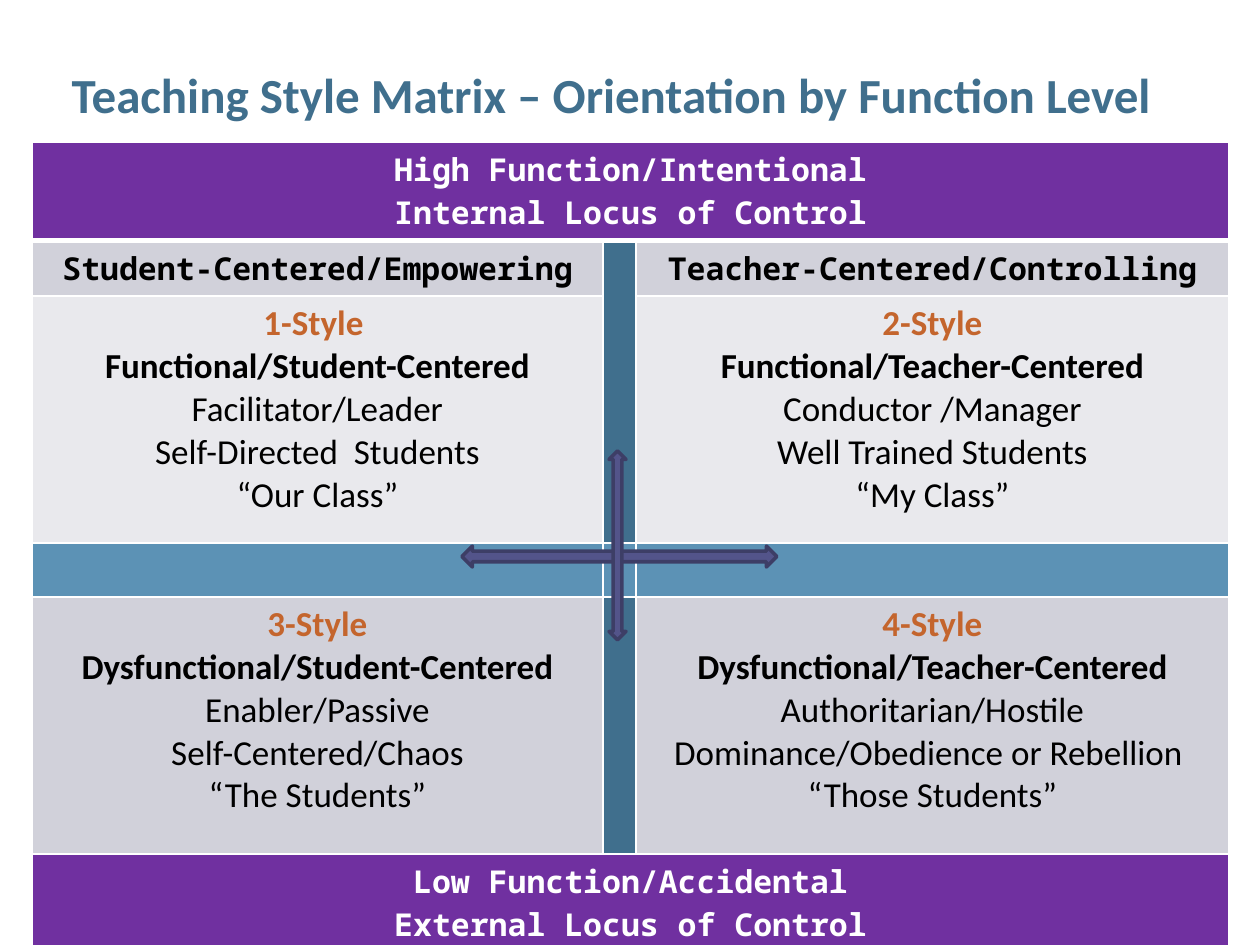
from lxml.etree import SubElement
from pptx import Presentation
from pptx.dml.color import RGBColor
from pptx.enum.shapes import MSO_SHAPE
from pptx.enum.text import MSO_ANCHOR, PP_ALIGN
from pptx.oxml.ns import qn
from pptx.util import Pt

EMU_PER_PX = 914400 / 126
COLORS = {
    "white": "FFFFFF",
    "black": "000000",
    "purple": "7030A0",
    "heading": "D1D1DA",
    "light": "E9E9ED",
    "teal": "406F8D",
    "blue": "5C92B5",
    "orange": "C4652D",
    "arrow": "53548A",
    "outline": "3D3E66",
}
BODY_FONT = "Calibri"
HEADING_FONT = "Noto Sans Mono"
COLUMN_WIDTHS = [571, 33, 593]
ROW_HEIGHTS = [88, 50, 247, 54, 257, 88]
BANNERS = {
    0: ["High Function/Intentional", "Internal Locus of Control"],
    5: ["Low Function/Accidental", "External Locus of Control"],
}
ORIENTATIONS = {0: "Student-Centered/Empowering", 2: "Teacher-Centered/Controlling"}
STYLES = {
    (2, 0): ["1-Style ", "Functional/Student-Centered", "Facilitator/Leader",
             "Self-Directed  Students", "“Our Class”"],
    (2, 2): ["2-Style", "Functional/Teacher-Centered", "Conductor /Manager",
             "Well Trained Students", "“My Class”"],
    (4, 0): ["3-Style", "Dysfunctional/Student-Centered", "Enabler/Passive",
             "Self-Centered/Chaos", "“The Students”"],
    (4, 2): ["4-Style", "Dysfunctional/Teacher-Centered", "Authoritarian/Hostile",
             "Dominance/Obedience or Rebellion ", "“Those Students”"],
}


def px(length):
    return round(length * EMU_PER_PX)


def color(name):
    return RGBColor.from_string(COLORS[name])


class SlideBuilder:
    def __init__(self, presentation):
        self.slide = presentation.slides.add_slide(presentation.slide_layouts[5])

    def add_lines(self, text_frame, lines, font, size):
        for index, (text, color_name, bold) in enumerate(lines):
            paragraph = text_frame.paragraphs[0] if index == 0 else text_frame.add_paragraph()
            paragraph.alignment = PP_ALIGN.CENTER
            run = paragraph.add_run()
            run.text = text
            run.font.name = font
            run.font.size = Pt(size)
            run.font.bold = bold
            run.font.color.rgb = color(color_name)

    def title(self, text, left, top, width, height):
        shape = self.slide.shapes.title
        shape.left, shape.top, shape.width, shape.height = map(px, (left, top, width, height))
        shape.text_frame.vertical_anchor = MSO_ANCHOR.MIDDLE
        self.add_lines(shape.text_frame, [(text, "teal", True)], BODY_FONT, 28)

    def table(self, left, top, column_widths, row_heights):
        table = self.slide.shapes.add_table(
            len(row_heights), len(column_widths), px(left), px(top),
            px(sum(column_widths)), px(sum(row_heights))).table
        table.first_row = table.horz_banding = False
        for column, width in zip(table.columns, column_widths):
            column.width = px(width)
        for row, height in zip(table.rows, row_heights):
            row.height = px(height)
        return table

    def cell(self, cell, fill, top_border=1, bottom_border=1):
        properties = cell._tc.get_or_add_tcPr()
        borders = {"lnL": 1, "lnR": 1, "lnT": top_border, "lnB": bottom_border}
        for tag, width in borders.items():
            line = SubElement(properties, qn(f"a:{tag}"), w=str(Pt(width)))
            solid = SubElement(line, qn("a:solidFill"))
            SubElement(solid, qn("a:srgbClr"), val=COLORS["white"])
        cell.fill.solid()
        cell.fill.fore_color.rgb = color(fill)

    def arrow(self, kind, left, top, width, height):
        shape = self.slide.shapes.add_shape(kind, *map(px, (left, top, width, height)))
        shape.shadow.inherit = False
        shape.fill.solid()
        shape.fill.fore_color.rgb = color("arrow")
        shape.line.color.rgb = color("outline")
        shape.line.width = Pt(2)


def cell_fill(row, column):
    if row in BANNERS:
        return "purple"
    if row == 3:
        return "blue"
    if column == 1:
        return "teal"
    return "light" if row == 2 else "heading"


def build_matrix(builder):
    table = builder.table(32, 142, COLUMN_WIDTHS, ROW_HEIGHTS)
    for row in range(len(ROW_HEIGHTS)):
        for column in range(len(COLUMN_WIDTHS)):
            builder.cell(table.cell(row, column), cell_fill(row, column),
                         top_border=3 if row == 1 else 1,
                         bottom_border=3 if row == 0 else 1)
    for row, texts in BANNERS.items():
        table.cell(row, 0).merge(table.cell(row, 2))
        lines = [(text, "white", True) for text in texts]
        builder.add_lines(table.cell(row, 0).text_frame, lines, HEADING_FONT, 18)
    table.cell(1, 1).merge(table.cell(2, 1))
    for column, text in ORIENTATIONS.items():
        builder.add_lines(table.cell(1, column).text_frame, [(text, "black", True)],
                          HEADING_FONT, 18)
    for position, texts in STYLES.items():
        lines = [(text, "orange" if index == 0 else "black", index < 2)
                 for index, text in enumerate(texts)]
        builder.add_lines(table.cell(*position).text_frame, lines, BODY_FONT, 20)


def main():
    presentation = Presentation()
    presentation.slide_width = px(1260)
    presentation.slide_height = px(945)
    builder = SlideBuilder(presentation)
    builder.title("Teaching Style Matrix – Orientation by Function Level", 42, 31, 1138, 126)
    build_matrix(builder)
    builder.arrow(MSO_SHAPE.LEFT_RIGHT_ARROW, 462, 546, 315, 21)
    builder.arrow(MSO_SHAPE.UP_DOWN_ARROW, 609, 451, 17, 189)
    presentation.save("out.pptx")


if __name__ == "__main__":
    main()
